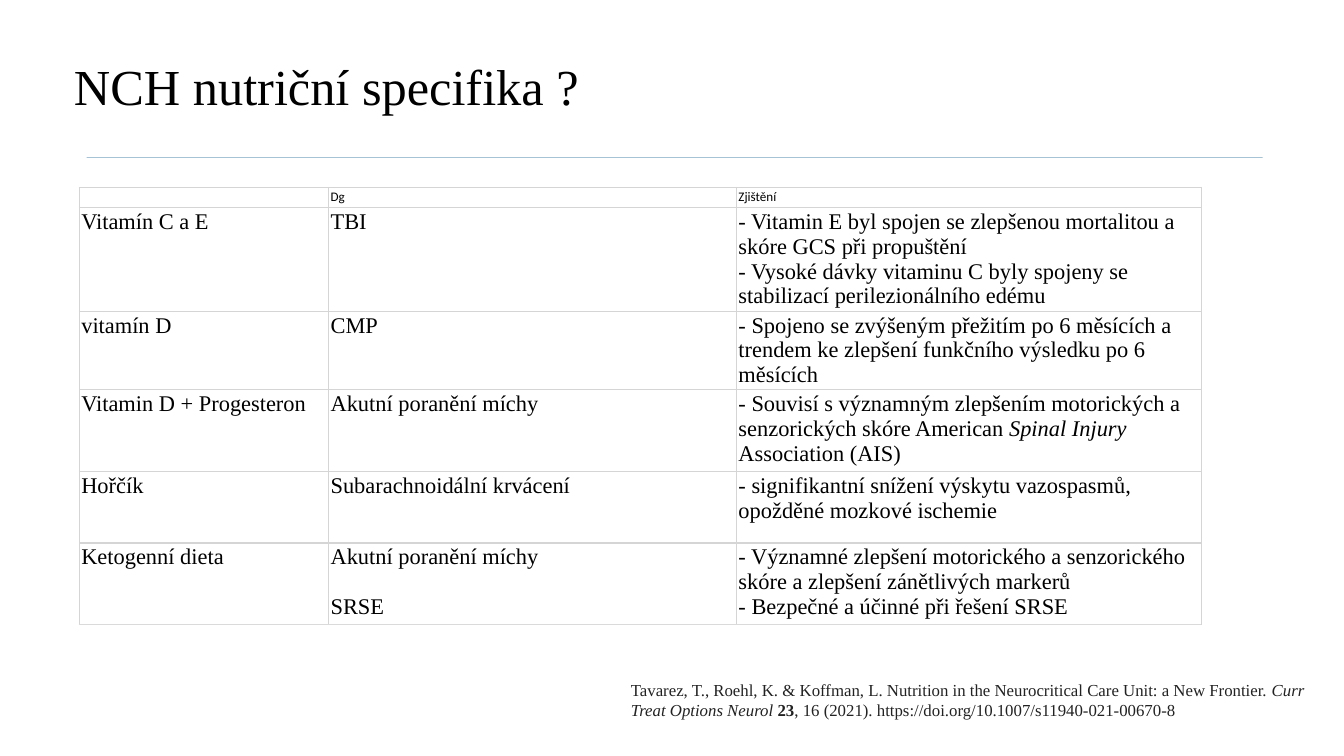
from dataclasses import dataclass

import pptx
import pptx.dml.color
import pptx.enum.shapes
import pptx.enum.text
import pptx.oxml
import pptx.oxml.ns
import pptx.util

Inches = pptx.util.Inches
Pt = pptx.util.Pt


@dataclass(frozen=True)
class Theme:
    serif: str = "Times New Roman"
    sans: str = "Calibri"
    black: str = "000000"
    citation: str = "222222"
    white: str = "FFFFFF"
    rule: str = "76A4BD"
    border: str = "D5D5D5"
    last_border: str = "DADADA"
    title_size: int = 54
    body_size: int = 24
    citation_size: int = 18
    header_size: int = 14


THEME = Theme()


@dataclass(frozen=True)
class Span:
    text: str
    italic: bool = False
    bold: bool = False


@dataclass(frozen=True)
class Style:
    font: str
    size: int
    color: str = THEME.black


@dataclass(frozen=True)
class Finding:
    nutrient: str
    diagnoses: list[str]
    results: list[str | list[Span]]
    height: float


TITLE = Style(THEME.serif, THEME.title_size)
HEADER = Style(THEME.sans, THEME.header_size)
BODY = Style(THEME.serif, THEME.body_size)
CITATION = Style(THEME.serif, THEME.citation_size, THEME.citation)

COLUMN_WIDTHS = [3.71, 6.07, 6.91]
HEADINGS = ["", "Dg", "Zjištění"]
HEADER_HEIGHT = 0.3
CELL_INSET = 0.03

FINDINGS = [
    Finding("Vitamín C a E", ["TBI"], [
        "- Vitamin E byl spojen se zlepšenou mortalitou a skóre GCS při propuštění",
        "- Vysoké dávky vitaminu C byly spojeny se stabilizací perilezionálního edému",
    ], 1.54),
    Finding("vitamín D", ["CMP"], [
        "- Spojeno se zvýšeným přežitím po 6 měsících a trendem ke zlepšení "
        "funkčního výsledku po 6 měsících",
    ], 1.17),
    Finding("Vitamin D + Progesteron", ["Akutní poranění míchy"], [[
        Span("- Souvisí s významným zlepšením motorických a senzorických skóre American "),
        Span("Spinal Injury ", italic=True),
        Span("Association (AIS)"),
    ]], 1.22),
    Finding("Hořčík", ["Subarachnoidální krvácení"], [
        "- signifikantní snížení výskytu vazospasmů, opožděné mozkové ischemie",
    ], 1.06),
    Finding("Ketogenní dieta", ["Akutní poranění míchy", "SRSE"], [
        "- Významné zlepšení motorického a senzorického skóre a zlepšení zánětlivých markerů",
        "- Bezpečné a účinné při řešení SRSE",
    ], 1.22),
]

REFERENCE = [
    Span("Tavarez, T., Roehl, K. & Koffman, L. Nutrition in the Neurocritical Care Unit: "
         "a New Frontier. "),
    Span("Curr Treat Options Neurol ", italic=True),
    Span("23", bold=True),
    Span(", 16 (2021). https://doi.org/10.1007/s11940-021-00670-8"),
]


def rgb(color: str) -> pptx.dml.color.RGBColor:
    return pptx.dml.color.RGBColor.from_string(color)


def apply(target, values: dict) -> None:
    for name, value in values.items():
        setattr(target, name, value)


def write(frame, paragraphs: list, style: Style, gap: float = 0) -> None:
    """Fill a text frame; gap is the space in points between paragraphs."""
    for index, content in enumerate(paragraphs):
        paragraph = frame.paragraphs[0] if index == 0 else frame.add_paragraph()
        apply(paragraph, {"alignment": pptx.enum.text.PP_ALIGN.LEFT,
                          "space_before": Pt(gap if index else 0)})
        spans = [Span(content)] if isinstance(content, str) else content
        for span in spans:
            run = paragraph.add_run()
            run.text = span.text
            apply(run.font, {"name": style.font, "size": Pt(style.size),
                             "italic": span.italic, "bold": span.bold})
            run.font.color.rgb = rgb(style.color)


def set_borders(cell, right_width: float, bottom_color: str) -> None:
    edges = [("L", 1.5, THEME.border), ("R", right_width, THEME.border),
             ("T", 1.5, THEME.border), ("B", 1.5, bottom_color)]
    properties = cell._tc.get_or_add_tcPr()
    for position, (side, width, color) in enumerate(edges):
        properties.insert(position, pptx.oxml.parse_xml(
            f'<a:ln{side} {pptx.oxml.ns.nsdecls("a")} w="{int(Pt(width))}">'
            f'<a:solidFill><a:srgbClr val="{color}"/></a:solidFill></a:ln{side}>'))


def fill_cell(cell, paragraphs: list, style: Style, gap: float,
              last_column: bool, last_row: bool) -> None:
    inset = Inches(CELL_INSET)
    apply(cell, {"margin_left": inset, "margin_right": inset,
                 "margin_top": inset, "margin_bottom": inset,
                 "vertical_anchor": pptx.enum.text.MSO_ANCHOR.TOP})
    cell.fill.solid()
    cell.fill.fore_color.rgb = rgb(THEME.white)
    set_borders(cell, 0.75 if last_column else 1.5,
                THEME.last_border if last_row else THEME.border)
    if paragraphs == [""]:
        # The blank corner takes the header size so that its row stays low
        cell.text_frame.paragraphs[0]._p.append(pptx.oxml.parse_xml(
            f'<a:endParaRPr {pptx.oxml.ns.nsdecls("a")} sz="{style.size * 100}">'
            f'<a:latin typeface="{style.font}"/></a:endParaRPr>'))
    else:
        write(cell.text_frame, paragraphs, style, gap)


def add_rule(slide) -> None:
    rule = slide.shapes.add_shape(pptx.enum.shapes.MSO_SHAPE.RECTANGLE, Inches(1.29),
                                  Inches(2.34), Inches(17.5), Inches(0.01))
    rule.fill.solid()
    rule.fill.fore_color.rgb = rgb(THEME.rule)
    rule.line.fill.background()
    rule._element.spPr.append(pptx.oxml.parse_xml(
        f'<a:effectLst {pptx.oxml.ns.nsdecls("a")}><a:outerShdw blurRad="12700" dist="12700" '
        'dir="5400000" rotWithShape="0"><a:srgbClr val="000000"><a:alpha val="75000"/>'
        '</a:srgbClr></a:outerShdw></a:effectLst>'))


def add_findings(slide) -> None:
    heights = [HEADER_HEIGHT] + [finding.height for finding in FINDINGS]
    table = slide.shapes.add_table(len(heights), len(COLUMN_WIDTHS), Inches(1.18), Inches(2.79),
                                   Inches(sum(COLUMN_WIDTHS)), Inches(sum(heights))).table
    apply(table, {"first_row": False, "horz_banding": False})
    for column, width in zip(table.columns, COLUMN_WIDTHS):
        column.width = Inches(width)
    for row, height in zip(table.rows, heights):
        row.height = Inches(height)

    rows = [[[heading] for heading in HEADINGS]]
    rows += [[[f.nutrient], f.diagnoses, f.results] for f in FINDINGS]
    one_line = THEME.body_size * 1.11
    for r, contents in enumerate(rows):
        for c, paragraphs in enumerate(contents):
            fill_cell(table.cell(r, c), paragraphs, BODY if r else HEADER,
                      one_line if c == 1 else 0,
                      c == len(contents) - 1, r == len(rows) - 1)


def main() -> None:
    presentation = pptx.Presentation()
    apply(presentation, {"slide_width": Inches(20), "slide_height": Inches(11.25)})
    slide = presentation.slides.add_slide(presentation.slide_layouts[5])

    # Title and the rule under it
    title = slide.shapes.title
    apply(title, {"left": Inches(1), "top": Inches(0.83),
                  "width": Inches(14), "height": Inches(1)})
    apply(title.text_frame, {"vertical_anchor": pptx.enum.text.MSO_ANCHOR.MIDDLE,
                             "auto_size": pptx.enum.text.MSO_AUTO_SIZE.NONE,
                             "word_wrap": True})
    write(title.text_frame, ["NCH nutriční specifika ?"], TITLE)
    title.text_frame.paragraphs[0].line_spacing = 0.9
    add_rule(slide)

    # Table of nutrients, diagnoses and findings
    add_findings(slide)

    # Literature reference
    reference = slide.shapes.add_textbox(Inches(9.29), Inches(10.07), Inches(10.24), Inches(0.71))
    apply(reference.text_frame, {"word_wrap": True,
                                 "auto_size": pptx.enum.text.MSO_AUTO_SIZE.SHAPE_TO_FIT_TEXT})
    write(reference.text_frame, [REFERENCE], CITATION)

    presentation.save("out.pptx")


if __name__ == "__main__":
    main()
